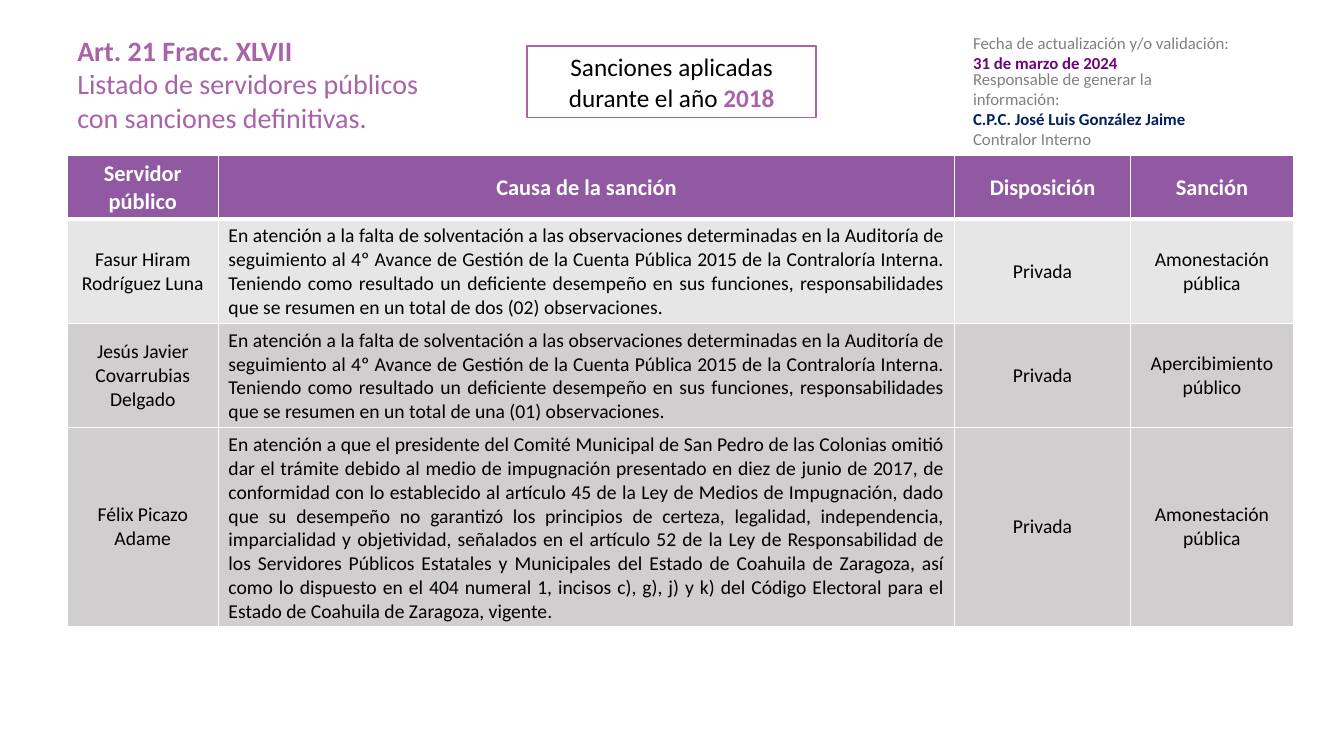
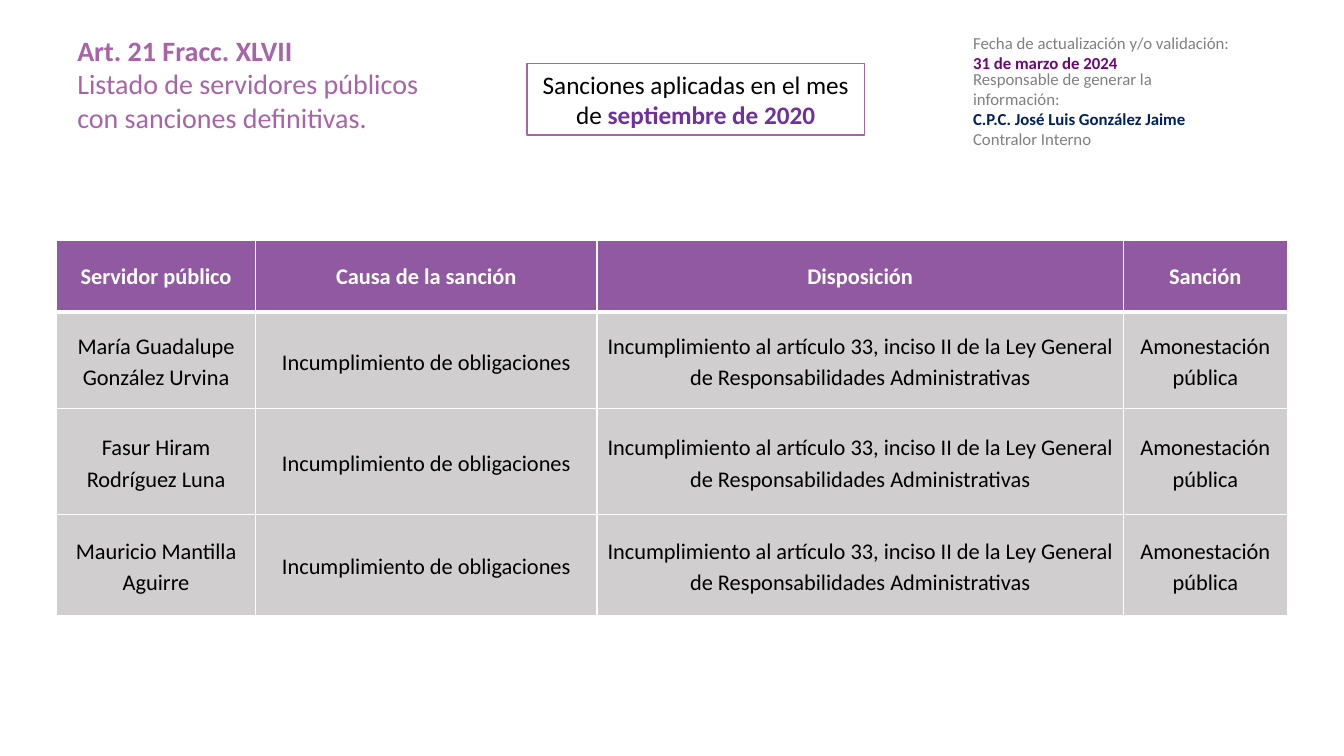
"""Builds two slides listing public servants with final sanctions."""
from lxml.etree import SubElement
from pptx import Presentation
from pptx.dml.color import RGBColor
from pptx.enum.shapes import MSO_SHAPE
from pptx.enum.text import MSO_ANCHOR, MSO_AUTO_SIZE, PP_ALIGN
from pptx.oxml.ns import qn
from pptx.util import Pt

WHITE = RGBColor(0xFF, 0xFF, 0xFF)
BLACK = RGBColor(0, 0, 0)
GRAY = RGBColor(0x80, 0x80, 0x80)
LILAC = RGBColor(0xA9, 0x63, 0xA9)
HEADER_PURPLE = RGBColor(0x90, 0x59, 0xA1)
DATE_PURPLE = RGBColor(0x6F, 0x05, 0x79)
MONTH_PURPLE = RGBColor(0x70, 0x30, 0xA0)
NAVY = RGBColor(0x00, 0x20, 0x60)
LIGHT_ROW = RGBColor(0xE7, 0xE6, 0xE6)
DARK_ROW = RGBColor(0xD0, 0xCE, 0xCE)
FONT = "Calibri"
TITLE_ONLY = 5

HEADINGS = ("Servidor público", "Causa de la sanción", "Disposición", "Sanción")
TITLE = [
    [("Art. 21 Fracc. XLVII", LILAC, True)],
    [("Listado de servidores públicos con sanciones definitivas.", LILAC, False)],
]
UPDATED = [
    [("Fecha de actualización y/o validación:", GRAY, False)],
    [("31 de marzo de 2024", DATE_PURPLE, True)],
]
RESPONSIBLE = [
    [("Responsable de generar la información:", GRAY, False)],
    [("C.P.C. José Luis González Jaime", NAVY, True)],
    [("Contralor Interno", GRAY, False)],
]
AUDIT_CAUSE = (
    "En atención a la falta de solventación a las observaciones determinadas en la "
    "Auditoría de seguimiento al 4º Avance de Gestión de la Cuenta Pública 2015 de la "
    "Contraloría Interna. Teniendo como resultado un deficiente desempeño en sus "
    "funciones, responsabilidades que se resumen en un total de {} observaciones."
)
APPEAL_CAUSE = (
    "En atención a que el presidente del Comité Municipal de San Pedro de las Colonias "
    "omitió dar el trámite debido al medio de impugnación presentado en diez de junio de "
    "2017, de conformidad con lo establecido al artículo 45 de la Ley de Medios de "
    "Impugnación, dado que su desempeño no garantizó los principios de certeza, legalidad, "
    "independencia, imparcialidad y objetividad, señalados en el artículo 52 de la Ley de "
    "Responsabilidad de los Servidores Públicos Estatales y Municipales del Estado de "
    "Coahuila de Zaragoza, así como lo dispuesto en el 404 numeral 1, incisos c), g), j) y "
    "k) del Código Electoral para el Estado de Coahuila de Zaragoza, vigente."
)
ROWS_2018 = [
    ("Fasur Hiram Rodríguez Luna", AUDIT_CAUSE.format("dos (02)"),
     "Privada", "Amonestación pública"),
    ("Jesús Javier Covarrubias Delgado", AUDIT_CAUSE.format("una (01)"),
     "Privada", "Apercibimiento público"),
    ("Félix Picazo Adame", APPEAL_CAUSE, "Privada", "Amonestación pública"),
]
ROWS_2020 = [
    (name, "Incumplimiento de obligaciones",
     "Incumplimiento al artículo 33, inciso II de la Ley General de "
     "Responsabilidades Administrativas", "Amonestación pública")
    for name in ("María Guadalupe González Urvina", "Fasur Hiram Rodríguez Luna",
                 "Mauricio Mantilla Aguirre")
]


def write(frame, paragraphs, size, align=PP_ALIGN.LEFT, spacing=1.0):
    """Fill a text frame with paragraphs of (text, colour, bold) runs."""
    for index, runs in enumerate(paragraphs):
        para = frame.add_paragraph() if index else frame.paragraphs[0]
        para.alignment = align
        para.line_spacing = spacing
        for text, color, bold in runs:
            span = para.add_run()
            span.text = text
            span.font.name = FONT
            span.font.size = Pt(size)
            span.font.bold = bold
            span.font.color.rgb = color


def add_title(page):
    """Place the shared title in its placeholder."""
    title = page.shapes.title
    title.left, title.top, title.width, title.height = Pt(48), Pt(20), Pt(277), Pt(104)
    frame = title.text_frame
    frame.auto_size = MSO_AUTO_SIZE.NONE
    frame.vertical_anchor = MSO_ANCHOR.TOP
    write(frame, TITLE, 20)


def add_validation(page):
    """Group the update date and the person responsible."""
    group = page.shapes.add_group_shape()
    for paragraphs, top, width, height, wrap in (
        (UPDATED, 20, 202, 36, False),
        (RESPONSIBLE, 45.5, 191, 66, True),
    ):
        box = group.shapes.add_textbox(Pt(688), Pt(top), Pt(width), Pt(height))
        box.text_frame.word_wrap = wrap
        write(box.text_frame, paragraphs, 12)


def add_period(page, top, width, runs):
    """Draw the outlined box that names the period."""
    box = page.shapes.add_shape(MSO_SHAPE.RECTANGLE, Pt(376.5), Pt(top), Pt(width), Pt(51))
    box.shadow.inherit = False
    box.fill.solid()
    box.fill.fore_color.rgb = WHITE
    box.line.color.rgb = LILAC
    box.line.width = Pt(1)
    box.text_frame.word_wrap = True
    write(box.text_frame, [runs], 18, PP_ALIGN.CENTER)


def set_borders(cell, top, bottom):
    """Give a cell white borders ahead of its fill."""
    properties = cell._tc.get_or_add_tcPr()
    edges = (("a:lnL", 1), ("a:lnR", 1), ("a:lnT", top), ("a:lnB", bottom))
    for position, (tag, width) in enumerate(edges):
        line = SubElement(properties, qn(tag), w=str(Pt(width)))
        fill = SubElement(line, qn("a:solidFill"))
        SubElement(fill, qn("a:srgbClr"), val=str(WHITE))
        properties.insert(position, line)


def add_sanctions(page, left, top, widths, heights, rows, fills, size,
                  cause_align=PP_ALIGN.CENTER, spacing=1.0, margins=(7.2, 3.6)):
    """Add the table of sanctions under its heading row."""
    table = page.shapes.add_table(
        len(heights), len(widths), Pt(left), Pt(top), Pt(sum(widths)), Pt(sum(heights))
    ).table
    table.horz_banding = False
    for column, width in zip(table.columns, widths):
        column.width = Pt(width)
    for row, height in zip(table.rows, heights):
        row.height = Pt(height)
    for row, texts in enumerate([HEADINGS, *rows]):
        heading = row == 0
        for column, text in enumerate(texts):
            cell = table.cell(row, column)
            cell.vertical_anchor = MSO_ANCHOR.MIDDLE
            cell.fill.solid()
            cell.fill.fore_color.rgb = HEADER_PURPLE if heading else fills[row - 1]
            set_borders(cell, 3 if row == 1 else 1, 3 if heading else 1)
            if heading:
                write(cell.text_frame, [[(text, WHITE, True)]], 16, PP_ALIGN.CENTER)
                continue
            side, edge = margins
            cell.margin_left = cell.margin_right = Pt(side)
            cell.margin_top = cell.margin_bottom = Pt(edge)
            align = cause_align if column == 1 else PP_ALIGN.CENTER
            write(cell.text_frame, [[(text, BLACK, False)]], size, align, spacing)


def add_page(deck):
    """Add a slide with the shared title and validation data."""
    page = deck.slides.add_slide(deck.slide_layouts[TITLE_ONLY])
    add_validation(page)
    add_title(page)
    return page


def main():
    """Build and save the deck."""
    deck = Presentation()
    deck.slide_width, deck.slide_height = Pt(960), Pt(540)

    page = add_page(deck)
    add_sanctions(page, 48, 111, (108, 526, 125.5, 116.5), (45, 74.5, 74.5, 141),
                  ROWS_2018, (LIGHT_ROW, DARK_ROW, DARK_ROW), 14, PP_ALIGN.JUSTIFY)
    add_period(page, 33, 206.5, [("Sanciones aplicadas durante el año ", BLACK, False),
                                 ("2018", LILAC, True)])

    page = add_page(deck)
    add_sanctions(page, 40.5, 172, (142, 244, 376, 117), (51, 69, 75.5, 72.5),
                  ROWS_2020, (DARK_ROW,) * 3, 16, spacing=1.15, margins=(5, 0))
    add_period(page, 45.5, 241, [("Sanciones aplicadas en el mes de ", BLACK, False),
                                 ("septiembre de 2020", MONTH_PURPLE, True)])
    deck.save("out.pptx")


if __name__ == "__main__":
    main()
